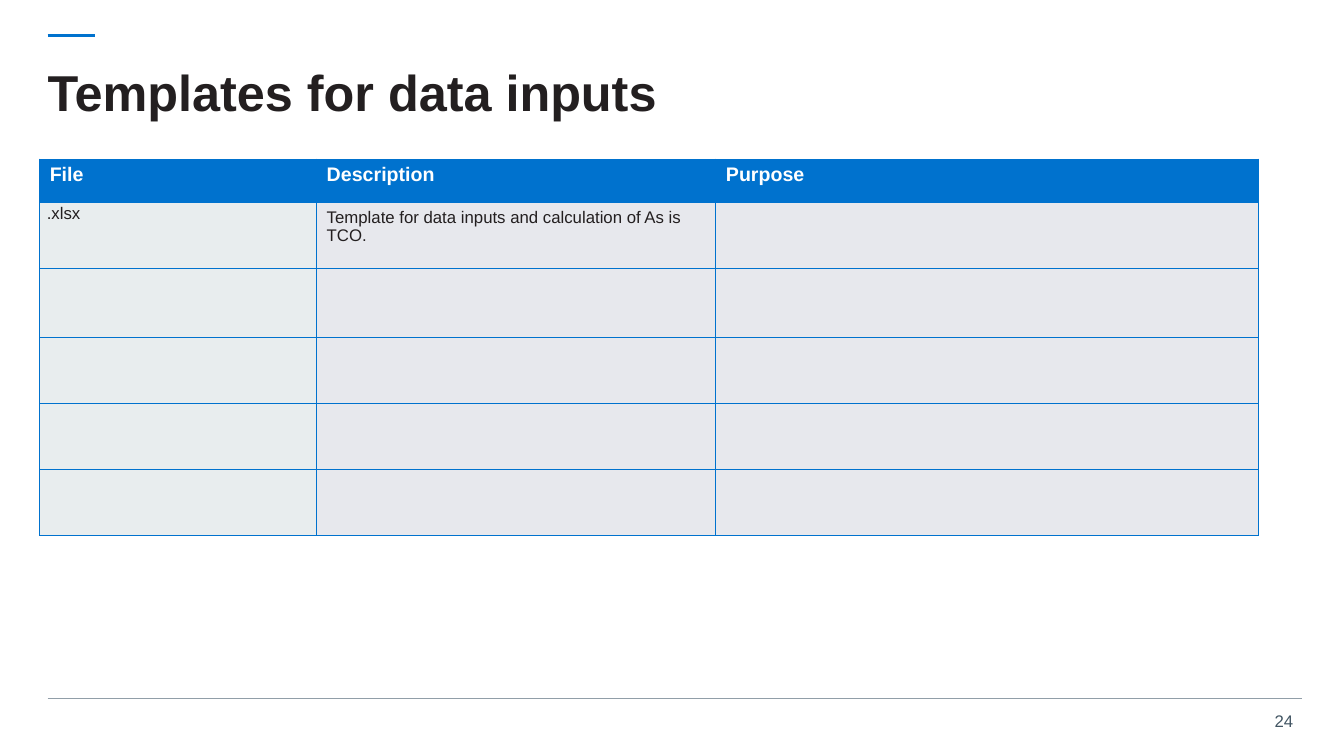
from dataclasses import dataclass

from lxml.etree import SubElement
from pptx import Presentation
from pptx.dml.color import RGBColor
from pptx.enum.shapes import MSO_CONNECTOR
from pptx.enum.text import MSO_ANCHOR, MSO_AUTO_SIZE, PP_ALIGN
from pptx.oxml.ns import qn
from pptx.slide import Slide
from pptx.table import _Cell
from pptx.text.text import _Paragraph
from pptx.util import Cm, Pt


@dataclass(frozen=True)
class Theme:
    font: str = "Arial"
    blue: str = "0072CE"
    ink: str = "231F20"
    white: str = "FFFFFF"
    slate: str = "425563"
    rule_grey: str = "919EA8"
    file_fill: str = "E8EDEE"
    detail_fill: str = "E7E8ED"
    title_size: int = 36
    header_size: int = 14
    body_size: int = 12
    border_width: int = 1


@dataclass(frozen=True)
class Rule:
    left: float
    right: float
    top: float
    color: str
    width: float


@dataclass(frozen=True)
class Column:
    heading: str
    width: float
    fill: str


THEME = Theme()
RULES = [
    Rule(1.2, 2.4, 0.89, THEME.blue, 2),
    Rule(1.2, 32.8, 17.6, THEME.rule_grey, 0.75),
]
COLUMNS = [
    Column("File", 6.98, THEME.file_fill),
    Column("Description", 10.06, THEME.detail_fill),
    Column("Purpose", 13.67, THEME.detail_fill),
]
ROW_HEIGHTS = [1.1, 1.66, 1.74, 1.66, 1.66, 1.66]
TEMPLATE_ROW = [".xlsx", "Template for data inputs and calculation of As is TCO.", ""]


def style_text(para: _Paragraph, size: int, color: str, bold: bool = False) -> None:
    for span in para.runs:
        span.font.name = THEME.font
        span.font.size = Pt(size)
        span.font.bold = bold
        span.font.color.rgb = RGBColor.from_string(color)


def add_rule(page: Slide, rule: Rule) -> None:
    line = page.shapes.add_connector(
        MSO_CONNECTOR.STRAIGHT, Cm(rule.left), Cm(rule.top), Cm(rule.right), Cm(rule.top)
    )
    line.line.color.rgb = RGBColor.from_string(rule.color)
    line.line.width = Pt(rule.width)
    SubElement(line._element.spPr, qn("a:effectLst"))


def add_title(page: Slide, text: str) -> None:
    title = page.shapes.title
    title.left, title.top, title.width, title.height = Cm(1.2), Cm(1.2), Cm(31.67), Cm(2.41)
    frame = title.text_frame
    frame.text = text
    frame.auto_size = MSO_AUTO_SIZE.NONE
    frame.vertical_anchor = MSO_ANCHOR.MIDDLE
    frame.margin_left = frame.margin_right = frame.margin_top = frame.margin_bottom = 0
    para = frame.paragraphs[0]
    para.alignment = PP_ALIGN.LEFT
    para.line_spacing = 0.9
    style_text(para, THEME.title_size, THEME.ink, bold=True)


def format_cell(cell: _Cell, fill: str) -> None:
    # Borders come before the fill in the cell properties
    properties = cell._tc.get_or_add_tcPr()
    for side in ("a:lnL", "a:lnR", "a:lnT", "a:lnB"):
        border = SubElement(properties, qn(side), w=str(Pt(THEME.border_width)))
        SubElement(SubElement(border, qn("a:solidFill")), qn("a:srgbClr"), val=THEME.blue)
    cell.fill.solid()
    cell.fill.fore_color.rgb = RGBColor.from_string(fill)


def add_template_table(page: Slide) -> None:
    frame = page.shapes.add_table(
        len(ROW_HEIGHTS), len(COLUMNS), Cm(1), Cm(4.01),
        Cm(sum(column.width for column in COLUMNS)), Cm(sum(ROW_HEIGHTS)),
    )
    table = frame.table
    for row, height in zip(table.rows, ROW_HEIGHTS):
        row.height = Cm(height)
    for index, column in enumerate(COLUMNS):
        table.columns[index].width = Cm(column.width)
        for row_index in range(len(ROW_HEIGHTS)):
            format_cell(table.cell(row_index, index), column.fill if row_index else THEME.blue)

        # Heading and the one filled row
        heading, entry = table.cell(0, index), table.cell(1, index)
        heading.text_frame.text = column.heading
        style_text(heading.text_frame.paragraphs[0], THEME.header_size, THEME.white, bold=True)
        if TEMPLATE_ROW[index]:
            entry.text_frame.text = TEMPLATE_ROW[index]
            style_text(entry.text_frame.paragraphs[0], THEME.body_size, THEME.ink)

    # The file name sits tight against the top of its cell
    file_cell = table.cell(1, 0)
    file_cell.margin_left = file_cell.margin_right = Cm(0.18)
    file_cell.margin_top = file_cell.margin_bottom = 0
    file_para = file_cell.text_frame.paragraphs[0]
    file_para.line_spacing = 1.07
    file_para.space_after = Pt(8)


def add_page_number(page: Slide, number: str) -> None:
    box = page.shapes.add_textbox(Cm(31.8), Cm(17.78), Cm(1.04), Cm(0.76))
    box.text_frame.text = number
    box.text_frame.word_wrap = True
    para = box.text_frame.paragraphs[0]
    para.alignment = PP_ALIGN.RIGHT
    style_text(para, THEME.body_size, THEME.slate)


def main() -> None:
    deck = Presentation()
    deck.slide_width, deck.slide_height = Cm(33.87), Cm(19.05)
    page = deck.slides.add_slide(deck.slide_layouts.get_by_name("Title Only"))

    add_page_number(page, "24")
    for rule in RULES:
        add_rule(page, rule)
    add_title(page, "Templates for data inputs")
    add_template_table(page)
    deck.save("out.pptx")


if __name__ == "__main__":
    main()
